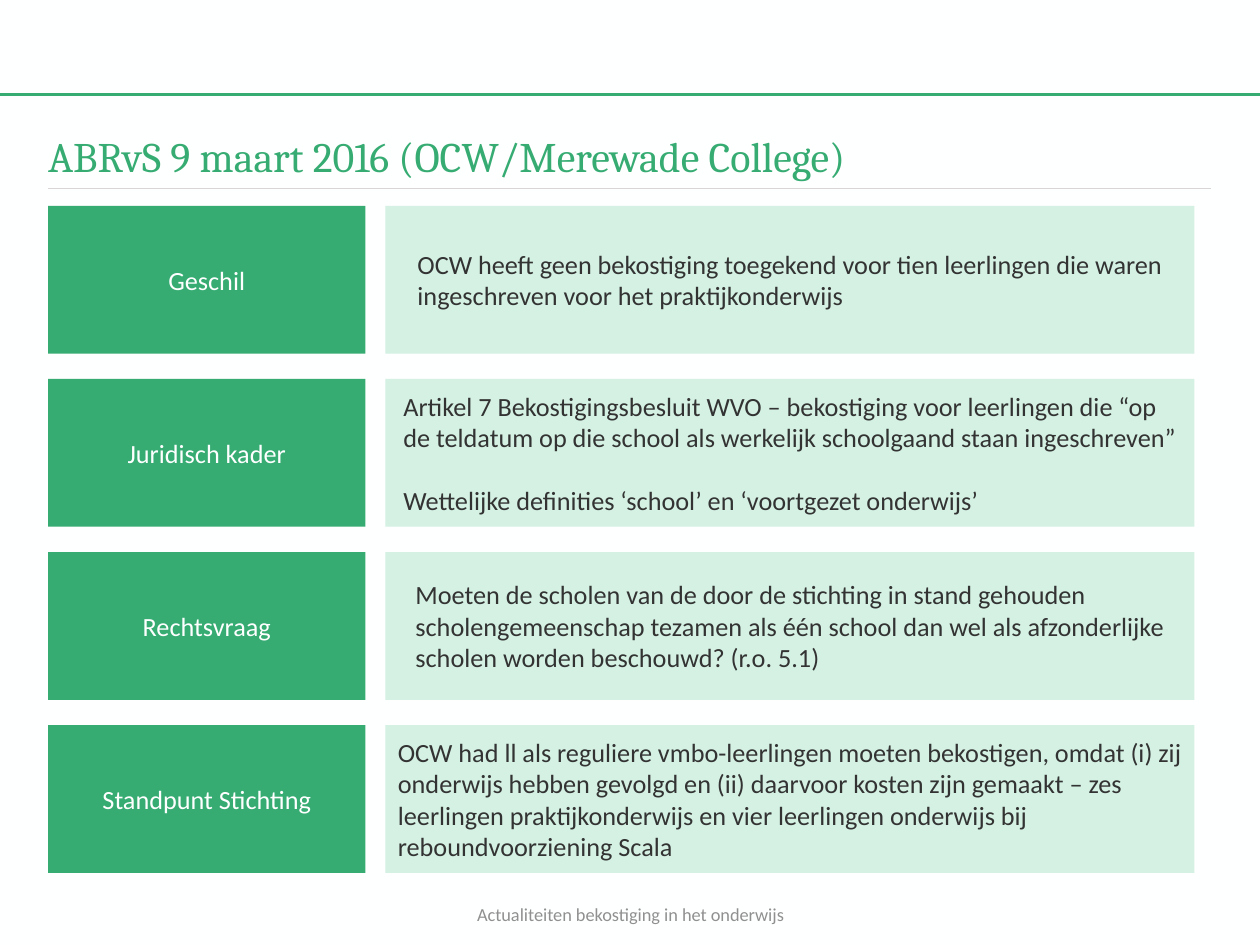
from pptx import Presentation
from pptx import util as u
from pptx.dml.color import RGBColor
from pptx.enum import shapes, text
from pptx.oxml import ns
from lxml import etree

GREEN = RGBColor(0x36, 0xAC, 0x73)
MINT = RGBColor(0xD4, 0xF1, 0xE3)
WHITE = RGBColor(0xFE, 0xFF, 0xFF)
DARK = RGBColor(0x33, 0x33, 0x33)
GREY = RGBColor(0x90, 0x90, 0x90)
PALE = RGBColor(0xD7, 0xD5, 0xD6)

ROWS = [
    ("Geschil", ["OCW heeft geen bekostiging toegekend voor tien leerlingen die waren "
                 "ingeschreven voor het praktijkonderwijs"]),
    ("Juridisch kader", ["Artikel 7 Bekostigingsbesluit WVO – bekostiging voor leerlingen die “op "
                         "de teldatum op die school als werkelijk schoolgaand staan ingeschreven”",
                         "Wettelijke definities ‘school’ en ‘voortgezet onderwijs’"]),
    ("Rechtsvraag", ["Moeten de scholen van de door de stichting in stand gehouden "
                     "scholengemeenschap tezamen als één school dan wel als afzonderlijke "
                     "scholen worden beschouwd? (r.o. 5.1)"]),
    ("Standpunt Stichting", ["OCW had ll als reguliere vmbo-leerlingen moeten bekostigen, omdat (i) "
                             "zij onderwijs hebben gevolgd en (ii) daarvoor kosten zijn gemaakt – zes "
                             "leerlingen praktijkonderwijs en vier leerlingen onderwijs bij "
                             "reboundvoorziening Scala"]),
]
TOP, STEP, HIGH = 4.15, 3.49, 2.98


class Deck:
    """Holds the style and the current slide, and draws each kind of element."""

    def __init__(self):
        self.prs = Presentation()
        self.prs.slide_width, self.prs.slide_height = u.Cm(25.4), u.Cm(19.05)
        self.slide = self.prs.slides.add_slide(self.prs.slide_layouts[6])
        fill = self.slide.background.fill
        fill.solid()
        fill.fore_color.rgb = WHITE

    def rule(self, left, right, top, color, width):
        line = self.slide.shapes.add_connector(
            shapes.MSO_CONNECTOR.STRAIGHT, u.Cm(left), u.Cm(top), u.Cm(right), u.Cm(top))
        line.line.color.rgb = color
        line.line.width = u.Pt(width)
        etree.SubElement(line._element.spPr, ns.qn("a:effectLst"))

    def style(self, frame, paras, size, color, align, font="Calibri"):
        frame.word_wrap = True
        frame.text = "\n".join(paras)
        for i, para in enumerate(frame.paragraphs):
            para.alignment = align
            if i:
                para.space_before = u.Pt(18)
            for run in para.runs:
                run.font.name = font
                run.font.size = u.Pt(size)
                run.font.color.rgb = color

    def label(self, box, words, size, color, align, anchor, font="Calibri"):
        frame = self.slide.shapes.add_textbox(*map(u.Cm, box)).text_frame
        frame.margin_left = frame.margin_right = frame.margin_top = frame.margin_bottom = 0
        frame.vertical_anchor = anchor
        self.style(frame, [words], size, color, align, font)

    def block(self, box, paras, fill, color):
        shape = self.slide.shapes.add_shape(shapes.MSO_SHAPE.RECTANGLE, *map(u.Cm, box))
        shape.shadow.inherit = False
        shape.fill.solid()
        shape.fill.fore_color.rgb = fill
        shape.line.fill.background()
        frame = shape.text_frame
        frame.vertical_anchor = text.MSO_ANCHOR.MIDDLE
        frame._txBody.bodyPr.set("anchorCtr", "1")
        self.style(frame, paras, 15, color, text.PP_ALIGN.LEFT)


def main():
    deck = Deck()
    deck.rule(0, 25.4, 1.9, GREEN, 1.5)
    deck.rule(0.97, 24.41, 3.8, PALE, 1)
    deck.label((0.97, 2.64, 23.42, 1.02), "ABRvS 9 maart 2016 (OCW/Merewade College)", 24,
               GREEN, text.PP_ALIGN.LEFT, text.MSO_ANCHOR.TOP, "Cambria")
    for i, (head, body) in enumerate(ROWS):
        top = TOP + i * STEP
        deck.block((0.97, top, 6.4, HIGH), [head], GREEN, WHITE)
        deck.block((7.77, top, 16.31, HIGH), body, MINT, DARK)
    deck.label((8.69, 18.19, 8.05, 0.46), "Actualiteiten bekostiging in het onderwijs", 10.5,
               GREY, text.PP_ALIGN.CENTER, text.MSO_ANCHOR.MIDDLE)
    deck.prs.save("out.pptx")


if __name__ == "__main__":
    main()
